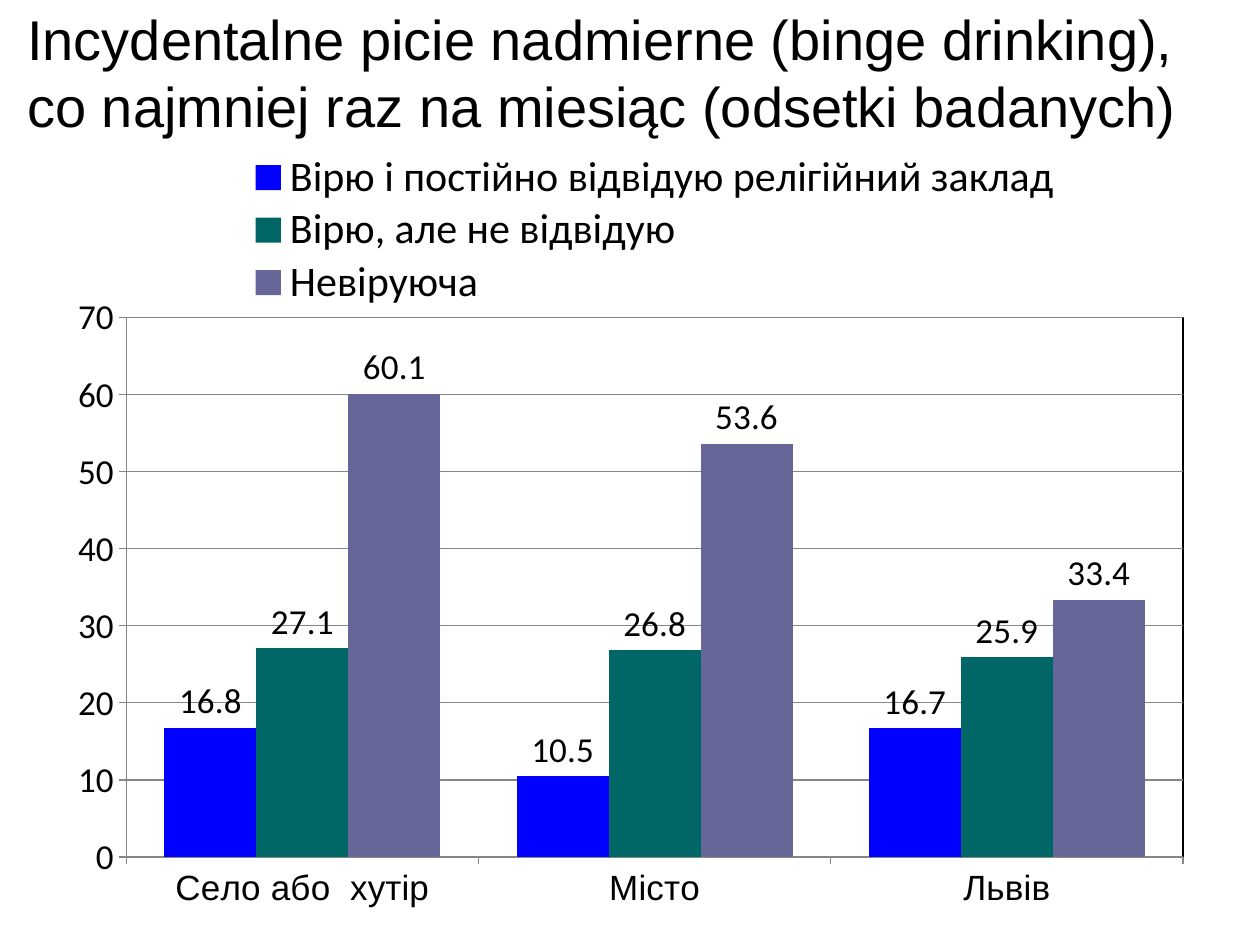
from lxml import etree
from pptx import Presentation
from pptx import util as u
from pptx.chart import data as d
from pptx.dml.color import RGBColor
from pptx.enum import chart as c, text as t
from pptx.oxml import ns

BLACK = RGBColor(0x00, 0x00, 0x00)
GREY = RGBColor(0x86, 0x86, 0x86)
BLUE = RGBColor(0x00, 0x00, 0xFF)
TEAL = RGBColor(0x00, 0x66, 0x66)
PLUM = RGBColor(0x66, 0x66, 0x99)

TITLE = ("Incydentalne picie nadmierne (binge drinking), "
         "co najmniej raz na miesiąc (odsetki badanych)")
PLACES = ["Село або  хутір", "Місто", "Львів"]
GROUPS = [
    ("Вірю і постійно відвідую релігійний заклад", BLUE, (16.8, 10.5, 16.7)),
    ("Вірю, але не відвідую", TEAL, (27.1, 26.8, 25.9)),
    ("Невіруюча", PLUM, (60.1, 53.6, 33.4)),
]


def set_font(font, size, face="Calibri", color=BLACK):
    font.size, font.name, font.bold = u.Pt(size), face, False
    font.color.rgb = color


def write(frame, words, size=18, face="Arial", color=BLACK):
    run = frame.paragraphs[0].add_run()
    run.text = words
    set_font(run.font, size, face, color)


def layout(inner=False, **box):
    node = etree.Element(ns.qn("c:layout"))
    part = etree.SubElement(node, ns.qn("c:manualLayout"))
    pairs = [("layoutTarget", "inner")] if inner else []
    pairs += [("xMode", "edge"), ("yMode", "edge"), *box.items()]
    for name, val in pairs:
        etree.SubElement(part, ns.qn("c:" + name)).set("val", str(val))
    return node


def frame_plot(area, color):
    props = etree.SubElement(area, ns.qn("c:spPr"))
    etree.SubElement(props, ns.qn("a:noFill"))
    line = etree.SubElement(props, ns.qn("a:ln"), w="9525")
    fill = etree.SubElement(line, ns.qn("a:solidFill"))
    etree.SubElement(fill, ns.qn("a:srgbClr"), val=str(color))


class Deck:
    """Holds the style and the current slide."""

    def __init__(self, face="Arial", size=20):
        self.face, self.size = face, size
        self.pres = Presentation()
        self.pres.slide_width, self.pres.slide_height = u.Cm(25.4), u.Cm(19.05)
        self.slide = self.pres.slides.add_slide(self.pres.slide_layouts[6])

    def title(self, words, *box):
        frame = self.slide.shapes.add_textbox(*map(u.Cm, box)).text_frame
        frame.word_wrap = True
        frame.vertical_anchor = t.MSO_ANCHOR.MIDDLE
        write(frame, words, size=32, face=self.face)

    def bars(self, places, groups, *box):
        data = d.CategoryChartData(number_format="General")
        data.categories = places
        for name, _, vals in groups:
            data.add_series(name, vals)
        chart = self.slide.shapes.add_chart(
            c.XL_CHART_TYPE.COLUMN_CLUSTERED, *map(u.Cm, box), data).chart
        chart.has_title = False
        set_font(chart.font, 18)
        plot = chart.plots[0]
        plot.gap_width, plot.overlap, plot.vary_by_categories = 83, 0, False
        for bar, (_, color, _) in zip(plot.series, groups):
            self.paint(bar, color)
        self.axes(chart)
        self.legend(chart)
        area = chart.element.xpath("c:chart/c:plotArea")[0]
        for old in area.findall(ns.qn("c:layout")):
            area.remove(old)
        area.insert(0, layout(True, x=0.07, y=0.23, w=0.9, h=0.68))
        frame_plot(area, BLACK)

    def paint(self, bar, color):
        bar.format.fill.solid()
        bar.format.fill.fore_color.rgb = color
        bar.invert_if_negative = False
        labels = bar.data_labels
        labels.show_value = True
        labels.position = c.XL_LABEL_POSITION.OUTSIDE_END
        set_font(labels.font, self.size)

    def axes(self, chart):
        val, cat = chart.value_axis, chart.category_axis
        val.minimum_scale, val.maximum_scale, val.major_unit = 0, 70, 10
        val.has_major_gridlines = True
        for axis, face in ((val, "Calibri"), (cat, self.face)):
            axis.major_tick_mark = c.XL_TICK_MARK.OUTSIDE
            set_font(axis.tick_labels.font, self.size, face)
        for part in (val, cat, val.major_gridlines):
            part.format.line.color.rgb = GREY
            part.format.line.width = u.Pt(0.75)

    def legend(self, chart):
        chart.has_legend = True
        key = chart.legend
        key.position = c.XL_LEGEND_POSITION.TOP
        key.include_in_layout = False
        set_font(key.font, 24)
        spot = chart.element.xpath("c:chart/c:legend/c:legendPos")[0]
        for old in chart.element.xpath("c:chart/c:legend/c:layout"):
            old.getparent().remove(old)
        spot.addnext(layout(x=0.16, y=0.02, w=0.72, h=0.2))


def main():
    deck = Deck()
    deck.title(TITLE, 0.3, 0.15, 24.41, 2.59)
    deck.bars(PLACES, GROUPS, 0.89, 2.72, 23.67, 16)
    deck.pres.save("out.pptx")


if __name__ == "__main__":
    main()
